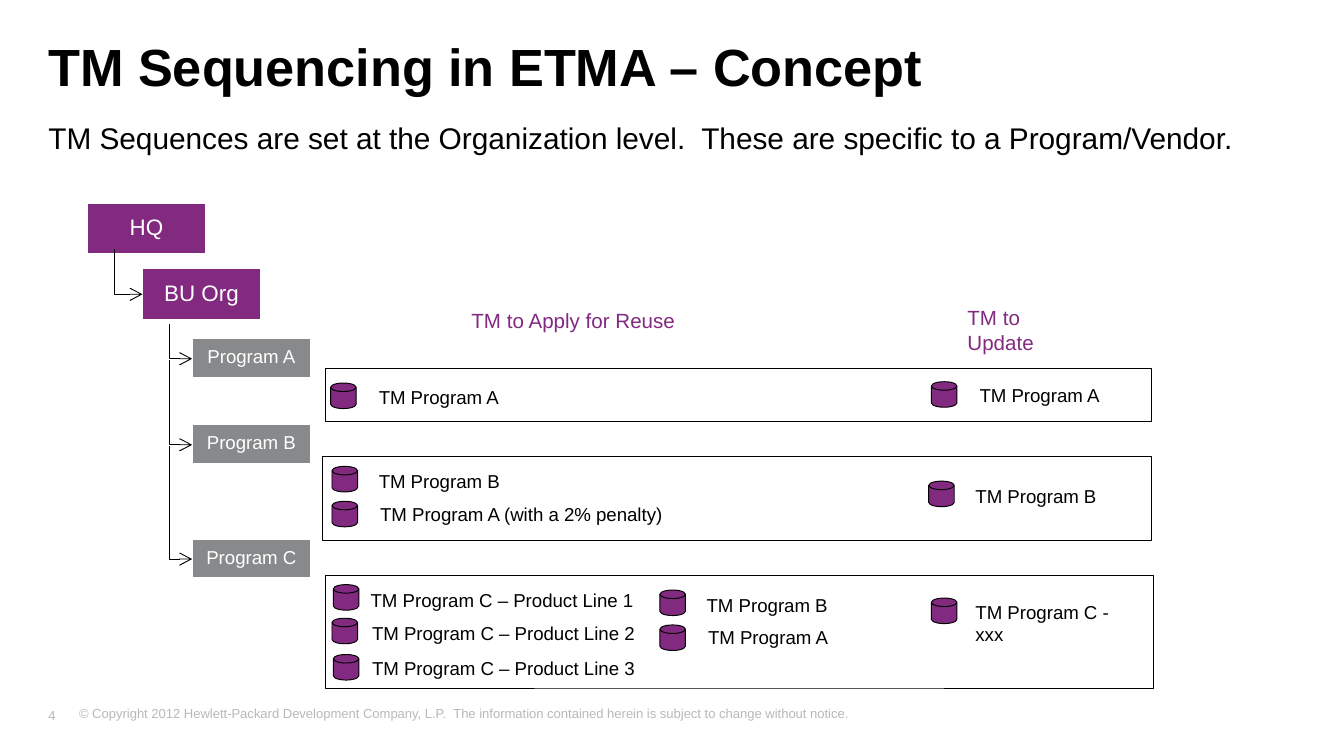
from typing import NamedTuple

from lxml.etree import SubElement
from pptx import Presentation
from pptx.dml.color import RGBColor
from pptx.enum.shapes import MSO_CONNECTOR, MSO_SHAPE
from pptx.enum.text import MSO_ANCHOR, PP_ALIGN
from pptx.oxml.ns import qn
from pptx.util import Inches, Pt

COLORS = {
    "purple": "822980",
    "gray": "87898B",
    "footer": "B9B8BB",
    "black": "000000",
    "white": "FFFFFF",
}
SLIDE_WIDTH = 10
SLIDE_HEIGHT = SLIDE_WIDTH * 9 / 16
DISK_SIZE = 0.19
LABEL_HEIGHT = 0.27


class Node(NamedTuple):
    text: str
    left: float
    top: float
    height: float
    color: str
    size: int


class Elbow(NamedTuple):
    left: float
    top: float
    right: float
    bottom: float


class Frame(NamedTuple):
    left: float
    top: float
    width: float
    height: float


class Memory(NamedTuple):
    text: str
    disk_left: float
    disk_top: float
    label_left: float
    label_top: float
    label_width: float = 1.3


class Label(NamedTuple):
    text: str
    left: float
    top: float
    width: float
    height: float
    size: int
    color: str = "black"
    bold: bool = False
    inset: bool = True
    anchor: MSO_ANCHOR = MSO_ANCHOR.TOP


def rgb(name: str) -> RGBColor:
    return RGBColor.from_string(COLORS[name])


def write(paragraph, text: str, size: int, color: str, bold: bool = False) -> None:
    span = paragraph.add_run()
    span.text = text
    font_format = {"name": "Arial", "size": Pt(size), "bold": bold}
    for attribute, value in font_format.items():
        setattr(span.font, attribute, value)
    span.font.color.rgb = rgb(color)


def draw_shape(page, kind, frame: Frame, fill: str | None, line: str, weight: float):
    shape = page.shapes.add_shape(kind, *map(Inches, frame))
    shape.shadow.inherit = False
    if fill:
        shape.fill.solid()
        shape.fill.fore_color.rgb = rgb(fill)
    else:
        shape.fill.background()
    shape.line.color.rgb = rgb(line)
    shape.line.width = Pt(weight)
    return shape


def draw_node(page, node: Node) -> None:
    frame = Frame(node.left, node.top, 0.88, node.height)
    box = draw_shape(page, MSO_SHAPE.RECTANGLE, frame, node.color, "white", 0.75)
    box.text_frame.vertical_anchor = MSO_ANCHOR.MIDDLE
    paragraph = box.text_frame.paragraphs[0]
    paragraph.alignment = PP_ALIGN.CENTER
    paragraph.line_spacing = 0.85
    write(paragraph, node.text, node.size, "white")


def draw_elbow(page, elbow: Elbow) -> None:
    """Draw a line that goes down, then right, as a quarter-turned bent connector."""
    center_x = (elbow.left + elbow.right) / 2
    center_y = (elbow.top + elbow.bottom) / 2
    half_width = (elbow.bottom - elbow.top) / 2
    half_height = (elbow.right - elbow.left) / 2
    connector = page.shapes.add_connector(
        MSO_CONNECTOR.ELBOW,
        Inches(center_x + half_width), Inches(center_y - half_height),
        Inches(center_x - half_width), Inches(center_y + half_height),
    )
    connector.line.color.rgb = rgb("black")
    connector.line.width = Pt(0.5)
    properties = connector._element.spPr
    properties.find(qn("a:xfrm")).set("rot", str(270 * 60000))
    properties.find(qn("a:prstGeom")).set("prst", "bentConnector2")
    SubElement(properties.find(qn("a:ln")), qn("a:tailEnd"), type="arrow")
    SubElement(properties, qn("a:effectLst"))


def draw_label(page, label: Label) -> None:
    box = page.shapes.add_textbox(*map(Inches, label[1:5]))
    frame = box.text_frame
    frame_format = {"word_wrap": True, "vertical_anchor": label.anchor}
    if not label.inset:
        sides = ("left", "top", "right", "bottom")
        frame_format.update({f"margin_{side}": 0 for side in sides})
    for attribute, value in frame_format.items():
        setattr(frame, attribute, value)
    write(frame.paragraphs[0], label.text, label.size, label.color, label.bold)


def draw_memory(page, memory: Memory) -> None:
    frame = Frame(memory.disk_left, memory.disk_top, DISK_SIZE, DISK_SIZE)
    draw_shape(page, MSO_SHAPE.FLOWCHART_MAGNETIC_DISK, frame, "purple", "black", 0.5)
    draw_label(page, Label(memory.text, memory.label_left, memory.label_top,
                           memory.label_width, LABEL_HEIGHT, 10))


LABELS = [
    # Footer
    Label("© Copyright 2012 Hewlett-Packard Development Company, L.P.  The information "
          "contained herein is subject to change without notice.",
          0.49, 5.2, 8.76, 0.25, 7, "footer"),
    Label("4", 0.36, 5.24, 0.35, 0.16, 7, "footer", inset=False, anchor=MSO_ANCHOR.MIDDLE),
    # Title and statement
    Label("TM Sequencing in ETMA – Concept", 0.36, 0.25, 8.88, 0.47, 28,
          bold=True, inset=False, anchor=MSO_ANCHOR.BOTTOM),
    Label("TM Sequences are set at the Organization level.  These are specific "
          "to a Program/Vendor.", 0.36, 0.89, 8.88, 0.3, 16, inset=False),
    # Column headings
    Label("TM to Apply for Reuse", 3.41, 2.24, 1.9, 0.29, 11, "purple"),
    Label("TM to Update", 7.1, 2.22, 1.12, 0.29, 11, "purple"),
]

PROGRAM_TOPS = {"A": 2.52, "B": 3.16, "C": 4.01}
NODES = [
    Node("HQ", 0.65, 1.51, 0.38, "purple", 12),
    Node("BU Org", 1.06, 2, 0.38, "purple", 12),
] + [Node(f"Program {name}", 1.43, top, 0.29, "gray", 10)
     for name, top in PROGRAM_TOPS.items()]

ELBOWS = [Elbow(0.85, 1.85, 1.06, 2.19)] + [
    Elbow(1.26, start, 1.43, top + 0.15)
    for start, top in zip((2.41, 2.68, 3.32), PROGRAM_TOPS.values())
]

FRAMES = [
    Frame(2.42, 2.74, 6.15, 0.4),
    Frame(2.4, 3.4, 6.17, 0.62),
    Frame(2.42, 4.28, 6.16, 0.84),
]

MEMORIES = [
    # Program A
    Memory("TM Program A", 2.46, 2.85, 2.72, 2.82),
    Memory("TM Program A", 6.93, 2.84, 7.19, 2.81),
    # Program B
    Memory("TM Program B", 2.47, 3.47, 2.72, 3.45),
    Memory("TM Program A (with a 2% penalty)", 2.47, 3.73, 2.73, 3.69, 2.5),
    Memory("TM Program B", 6.91, 3.58, 7.16, 3.56),
    # Program C
    Memory("TM Program C – Product Line 1", 2.48, 4.35, 2.66, 4.33, 2.3),
    Memory("TM Program C – Product Line 2", 2.47, 4.6, 2.67, 4.58, 2.3),
    Memory("TM Program C – Product Line 3", 2.48, 4.87, 2.67, 4.84, 2.3),
    Memory("TM Program B", 4.91, 4.39, 5.16, 4.37),
    Memory("TM Program A", 4.91, 4.65, 5.17, 4.61),
    Memory("TM Program C - xxx", 6.93, 4.45, 7.16, 4.42),
]


def main() -> None:
    deck = Presentation()
    deck.slide_width, deck.slide_height = Inches(SLIDE_WIDTH), Inches(SLIDE_HEIGHT)
    page = deck.slides.add_slide(deck.slide_layouts[6])
    for label in LABELS:
        draw_label(page, label)
    # Organization tree
    for node in NODES:
        draw_node(page, node)
    for elbow in ELBOWS:
        draw_elbow(page, elbow)
    # Memories of each program
    for frame in FRAMES:
        draw_shape(page, MSO_SHAPE.RECTANGLE, frame, None, "black", 0.5)
    for memory in MEMORIES:
        draw_memory(page, memory)
    deck.save("out.pptx")


if __name__ == "__main__":
    main()
